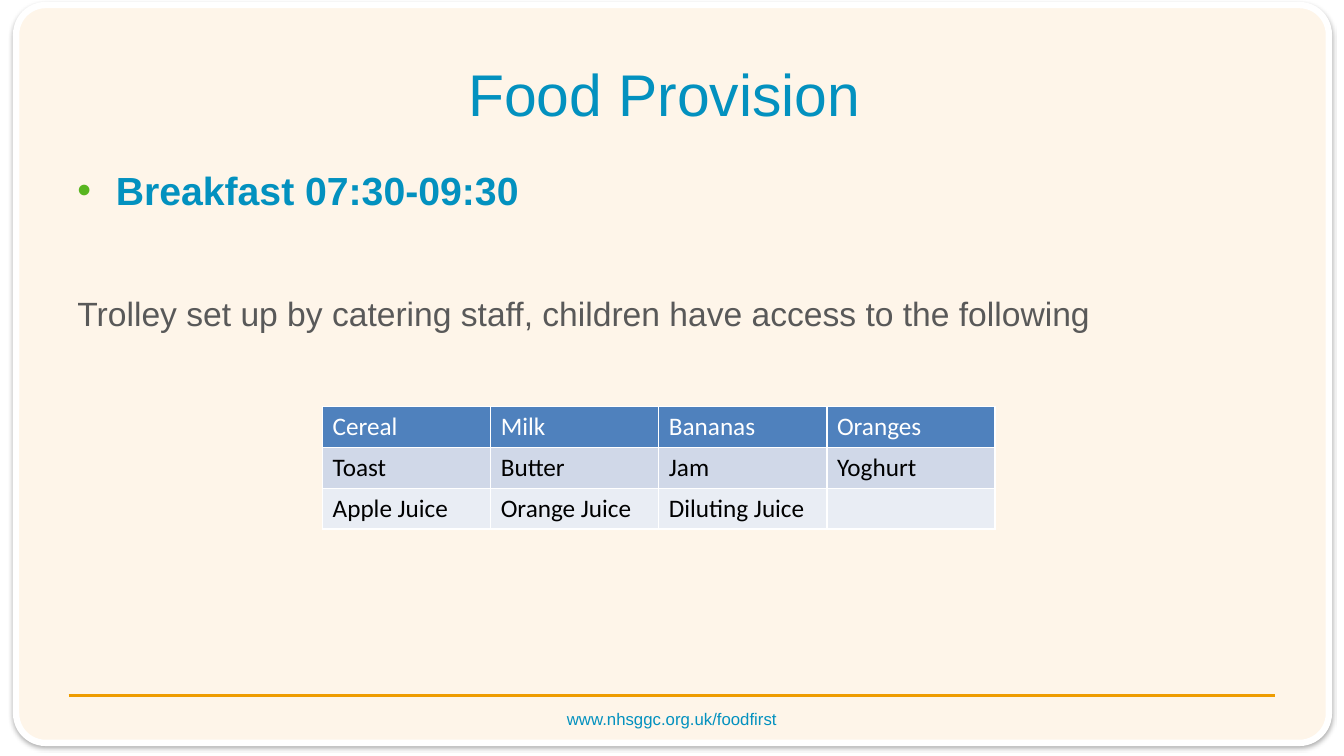
from dataclasses import dataclass

from lxml import etree
from pptx import Presentation
from pptx import util as u
from pptx.dml.color import RGBColor
from pptx.enum import shapes, text
from pptx.oxml import ns


@dataclass(frozen=True)
class Theme:
    heading_font: str = "Arial"
    table_font: str = "Calibri"
    white: str = "FFFFFF"
    black: str = "000000"
    cream: str = "FEF5E9"
    blue: str = "0391BF"
    green: str = "58B520"
    orange: str = "EE9C00"
    grey: str = "595959"
    row_fills: tuple = ("4F81BD", "D0D8E8", "E9EDF4")
    title_size: int = 42
    point_size: int = 28
    body_size: int = 24
    table_size: int = 18
    footer_size: int = 12


def rgb(value):
    return RGBColor.from_string(value)


def add_child(parent, tag, **attributes):
    return etree.SubElement(parent, ns.qn(tag), attributes)


def add_colour(parent, value):
    return add_child(parent, "a:srgbClr", val=value)


class SlideBuilder:
    def __init__(self, deck, theme):
        self.theme = theme
        self.page = deck.slides.add_slide(deck.slide_layouts[5])

    def style(self, para, size, colour, font=None, bold=False):
        for span in para.runs:
            span.font.name = font or self.theme.heading_font
            span.font.size = u.Pt(size)
            span.font.bold = bold
            span.font.color.rgb = rgb(colour)

    def place(self, box, left, top, width, height):
        box.left, box.top = u.Inches(left), u.Inches(top)
        box.width, box.height = u.Inches(width), u.Inches(height)

    def text_box(self, *area):
        return self.page.shapes.add_textbox(*map(u.Inches, area))

    def card(self, *area):
        card = self.page.shapes.add_shape(
            shapes.MSO_SHAPE.ROUNDED_RECTANGLE, *map(u.Inches, area))
        card.adjustments[0] = 0.04
        card.fill.solid()
        card.fill.fore_color.rgb = rgb(self.theme.cream)
        card.line.color.rgb = rgb(self.theme.white)
        card.line.width = u.Pt(4.5)
        card.shadow.inherit = False
        effects = card.element.spPr.find(ns.qn("a:effectLst"))
        shadow = add_child(effects, "a:outerShdw", blurRad=str(u.Pt(3.1)),
                           dist=str(u.Pt(1.8)), dir="5400000", rotWithShape="0")
        add_child(add_colour(shadow, self.theme.black), "a:alpha", val="35000")

    def rule(self, left, right, y):
        rule = self.page.shapes.add_connector(
            shapes.MSO_CONNECTOR.STRAIGHT,
            u.Inches(left), u.Inches(y), u.Inches(right), u.Inches(y))
        rule.line.color.rgb = rgb(self.theme.orange)
        rule.line.width = u.Pt(2)
        add_child(rule.element.spPr, "a:effectLst")

    def centred(self, box, wording, size):
        frame = box.text_frame
        frame.text = wording
        frame.word_wrap = True
        frame.auto_size = text.MSO_AUTO_SIZE.NONE
        frame.vertical_anchor = text.MSO_ANCHOR.MIDDLE
        para = frame.paragraphs[0]
        para.alignment = text.PP_ALIGN.CENTER
        self.style(para, size, self.theme.blue)

    def title(self, wording, *area):
        title = self.page.shapes.title
        title.element.getparent().append(title.element)
        self.place(title, *area)
        self.centred(title, wording, self.theme.title_size)

    def footer(self, wording, *area):
        self.centred(self.text_box(*area), wording, self.theme.footer_size)

    def body(self, point, detail, *area):
        frame = self.text_box(*area).text_frame
        frame.word_wrap = True
        heading = frame.paragraphs[0]
        heading.text = point
        heading.space_after = u.Pt(6)
        indent = u.Inches(0.38)
        properties = heading._p.get_or_add_pPr()
        properties.set("marL", str(indent))
        properties.set("indent", str(-indent))
        add_colour(add_child(properties, "a:buClr"), self.theme.green)
        add_child(properties, "a:buFont", typeface=self.theme.heading_font)
        add_child(properties, "a:buChar", char="•")
        self.style(heading, self.theme.point_size, self.theme.blue, bold=True)

        para = frame.add_paragraph()
        para.text = detail
        para.space_before = u.Pt(51)
        self.style(para, self.theme.body_size, self.theme.grey)

    def cell(self, cell, wording, fill, colour):
        properties = cell._tc.get_or_add_tcPr()
        for side in ("a:lnL", "a:lnR", "a:lnT", "a:lnB"):
            border = add_child(properties, side, w=str(u.Pt(1)))
            add_colour(add_child(border, "a:solidFill"), self.theme.white)
        cell.fill.solid()
        cell.fill.fore_color.rgb = rgb(fill)
        cell.text = wording
        self.style(cell.text_frame.paragraphs[0], self.theme.table_size,
                   colour, self.theme.table_font)

    def table(self, rows, *area):
        table = self.page.shapes.add_table(
            len(rows), len(rows[0]), *map(u.Inches, area)).table
        for r, (row, fill) in enumerate(zip(rows, self.theme.row_fills)):
            colour = self.theme.black if r else self.theme.white
            for c, wording in enumerate(row):
                self.cell(table.cell(r, c), wording, fill, colour)


def main():
    deck = Presentation()
    deck.slide_width, deck.slide_height = u.Inches(13.33), u.Inches(7.5)
    slide = SlideBuilder(deck, Theme())
    slide.card(0.16, 0.05, 13.02, 7.32)
    slide.footer("www.nhsggc.org.uk/foodfirst", 0.68, 6.98, 11.97, 0.3)
    slide.rule(0.68, 12.65, 6.9)
    slide.title("Food Provision ", 0.67, 0.3, 12, 1.25)
    slide.body(
        "Breakfast 07:30-09:30",
        "Trolley set up by catering staff, children have access to the following",
        0.67, 1.6, 12, 4.9)
    slide.table([
        ["Cereal", "Milk", "Bananas", "Oranges"],
        ["Toast", "Butter", "Jam", "Yoghurt"],
        ["Apple Juice", "Orange Juice", "Diluting Juice", ""],
    ], 3.2, 4.03, 6.67, 1.22)
    deck.save("out.pptx")


if __name__ == "__main__":
    main()
